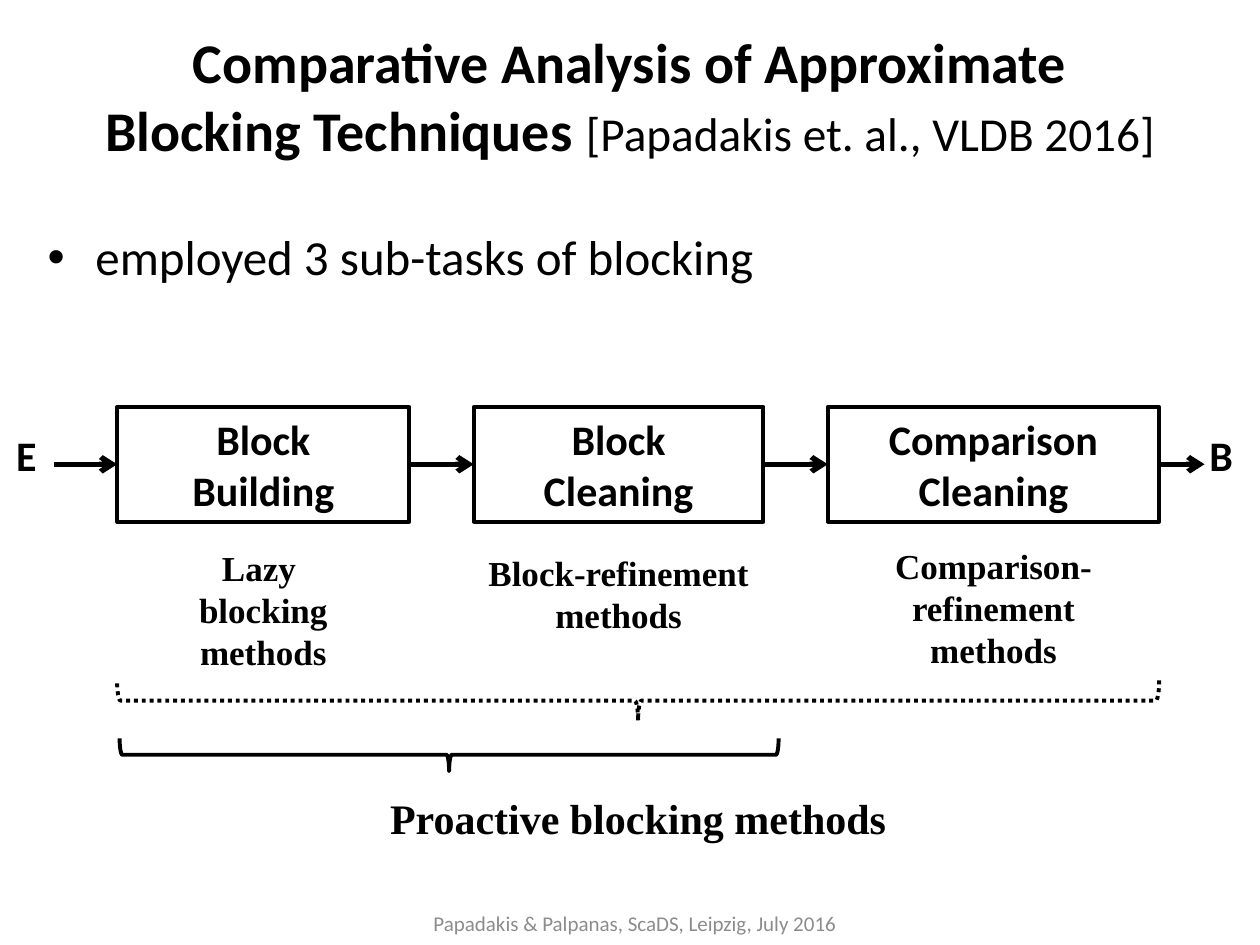
import pptx
import pptx.util
import pptx.dml.color
import pptx.enum.dml
import pptx.enum.shapes
import pptx.enum.text
import pptx.oxml

Inches, Pt = pptx.util.Inches, pptx.util.Pt
ALIGN = pptx.enum.text.PP_ALIGN
ANCHOR = pptx.enum.text.MSO_ANCHOR
SHAPE = pptx.enum.shapes.MSO_SHAPE
COLORS = {"ink": "000000", "gray": "8C8C8C"}
SERIF = "Times New Roman"


def color(name):
    return pptx.dml.color.RGBColor.from_string(COLORS[name])


def node(parent, tag, **attrs):
    item = pptx.oxml.parse_xml(
        f'<a:{tag} xmlns:a="http://schemas.openxmlformats.org/drawingml/2006/main"/>')
    for key, value in attrs.items():
        item.set(key, value)
    parent.append(item)


def write(frame, lines, size=24, font="Calibri", ink="ink", bold=True,
          align=ALIGN.CENTER, anchor=ANCHOR.TOP, bullet=False):
    """Each line is a paragraph: a string, or a list of (text, format) runs."""
    frame.word_wrap = True
    frame.vertical_anchor = anchor
    for i, line in enumerate(lines):
        para = frame.paragraphs[0] if i == 0 else frame.add_paragraph()
        para.alignment = align
        if bullet:
            props = para._p.get_or_add_pPr()
            props.set("marL", str(Inches(0.38)))
            props.set("indent", str(-Inches(0.38)))
            node(props, "buFont", typeface="Arial")
            node(props, "buChar", char="•")
        for text, style in [(line, {})] if isinstance(line, str) else line:
            for j, part in enumerate(text.split("\n")):
                if j:
                    para.add_line_break()
                run = para.add_run()
                run.text = part
                run.font.name = font
                run.font.size = Pt(style.get("size", size))
                run.font.bold = style.get("bold", bold)
                run.font.color.rgb = color(ink)


def label(slide, box, lines, **style):
    text = slide.shapes.add_textbox(*map(Inches, box))
    write(text.text_frame, lines, **style)


def outline(slide, kind, box, dash=None):
    shape = slide.shapes.add_shape(kind, *map(Inches, box))
    shape.shadow.inherit = False
    shape.fill.background()
    shape.line.color.rgb = color("ink")
    shape.line.width = Pt(2.25)
    if dash:
        shape.line.dash_style = dash
    return shape


def arrow(slide, start, end, y):
    line = slide.shapes.add_connector(
        pptx.enum.shapes.MSO_CONNECTOR.STRAIGHT,
        Inches(start), Inches(y), Inches(end), Inches(y))
    line.line.color.rgb = color("ink")
    line.line.width = Pt(3)
    node(line.line._get_or_add_ln(), "tailEnd", type="arrow")
    node(line._element.spPr, "effectLst")


def brace(slide, box, dash=None):
    """Draw a brace that opens upward and fills the given box."""
    x, y, w, h = box
    turned = (x + (w - h) / 2, y + (h - w) / 2, h, w)
    outline(slide, SHAPE.LEFT_BRACE, turned, dash).rotation = 270


def header(slide, box):
    x, y, w, h = box
    label(slide, box, [[
        ("Comparative Analysis of Approximate\nBlocking Techniques ", {}),
        ("[Papadakis et. al., VLDB 2016]", {"size": 27, "bold": False})]],
        size=32, anchor=ANCHOR.MIDDLE)
    label(slide, (x - 0.22, y + 1.62, w, 0.65), ["employed 3 sub-tasks of blocking"],
          size=28, bold=False, align=ALIGN.LEFT, bullet=True)


def flow(slide, box):
    x, y, w, h = box
    mid = y + h / 2
    # Offset, width, step name, methods, and drop of the methods label
    steps = [
        (0, 2.32, ["Block", "Building"], ["Lazy ", "blocking", "methods"], 1.06),
        (2.83, 2.3, ["Block", "Cleaning"], ["Block-refinement", "methods"], 1.1),
        (5.64, 2.63, ["Comparison", "Cleaning"],
         ["Comparison-refinement", "methods"], 1.04)]
    last = x - 0.5
    for dx, width, name, methods, drop in steps:
        left = x + dx
        arrow(slide, last, left, mid)
        rect = outline(slide, SHAPE.RECTANGLE, (left, y, width, h))
        write(rect.text_frame, name, anchor=ANCHOR.MIDDLE)
        label(slide, (left, y + drop, width, 0.35 * len(methods) + 0.07), methods,
              size=20, font=SERIF)
        last = left + width
    arrow(slide, last, last + 0.36, mid)
    # Input and output
    label(slide, (x - 0.9, y + 0.13, 0.39, 0.5), ["E"], align=ALIGN.LEFT)
    label(slide, (x + w + 0.3, y + 0.13, 0.44, 0.5), ["B"], align=ALIGN.LEFT)


def scope(slide, box):
    x, y, w, h = box
    brace(slide, (x, y, w, 0.32), pptx.enum.dml.MSO_LINE.ROUND_DOT)
    brace(slide, (x + 0.02, y + 0.46, 5.23, 0.26))
    label(slide, (x + 0.83, y + h - 0.5, 6.61, 0.5), ["Proactive blocking methods"],
          font=SERIF)


def footer(slide, box):
    label(slide, box, ["Papadakis & Palpanas, ScaDS, Leipzig, July 2016"],
          size=12, ink="gray", bold=False, anchor=ANCHOR.MIDDLE)


def main():
    deck = pptx.Presentation()
    deck.slide_width, deck.slide_height = Inches(10), Inches(7.5)
    slide = deck.slides.add_slide(deck.slide_layouts[6])
    header(slide, (0.5, 0.13, 9, 1.25))
    flow(slide, (0.93, 3.23, 8.27, 0.91))
    scope(slide, (0.93, 5.4, 8.27, 1.34))
    footer(slide, (3.27, 7.13, 3.54, 0.4))
    deck.save("out.pptx")


if __name__ == "__main__":
    main()
